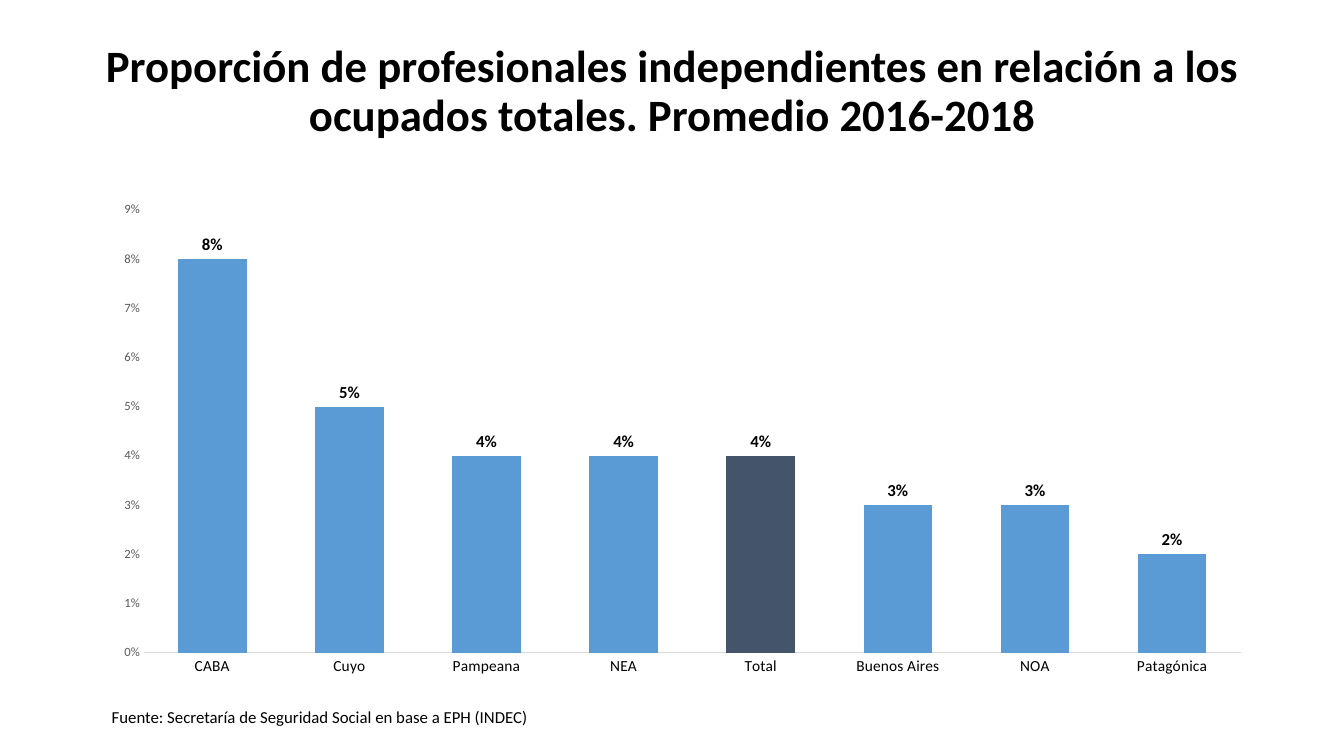
from dataclasses import dataclass
from typing import Any

from lxml.etree import SubElement
from pptx import Presentation
from pptx.chart.data import CategoryChartData
from pptx.dml.color import RGBColor
from pptx.enum.chart import XL_CHART_TYPE as ChartType
from pptx.enum.chart import XL_LABEL_POSITION as LabelPosition
from pptx.enum.chart import XL_TICK_MARK as TickMark
from pptx.enum.text import MSO_ANCHOR as Anchor
from pptx.enum.text import MSO_AUTO_SIZE as AutoSize
from pptx.enum.text import PP_ALIGN as Align
from pptx.oxml.ns import qn
from pptx.util import Inches, Pt


@dataclass(frozen=True)
class Theme:
    """Colours, font and type sizes of the slide."""
    font: str = "Calibri"
    ink: str = "000000"
    muted: str = "595959"
    rule: str = "D9D9D9"
    region: str = "5B9BD5"
    total: str = "44546A"
    title_size: int = 32
    source_size: int = 12
    label_size: int = 12
    region_size: int = 11
    chart_size: int = 10
    percent_size: int = 9


@dataclass(frozen=True)
class Box:
    """Position and size in inches."""
    left: float
    top: float
    width: float
    height: float

    def lengths(self) -> list[int]:
        """Return the four lengths for python-pptx."""
        return [Inches(v) for v in (self.left, self.top, self.width, self.height)]


@dataclass(frozen=True)
class Passage:
    """A block of text with its place and format."""
    text: str
    box: Box
    size: int
    frame_format: dict[str, Any]
    paragraph_format: dict[str, Any]
    bold: bool = False


@dataclass(frozen=True)
class Share:
    """Independent professionals as a share of all employed in a region."""
    region: str
    value: float


THEME = Theme()
PERCENT = "0%"
TOTAL = "Total"
CHART_BOX = Box(0.92, 2, 11.5, 4.76)
PLOT_LAYOUT = {
    "layoutTarget": "inner", "xMode": "edge", "yMode": "edge",
    "x": "0.044", "y": "0.017", "w": "0.946", "h": "0.923",
}
SHARES = [
    Share("CABA", 0.08),
    Share("Cuyo", 0.05),
    Share("Pampeana", 0.04),
    Share("NEA", 0.04),
    Share(TOTAL, 0.04),
    Share("Buenos Aires", 0.03),
    Share("NOA", 0.03),
    Share("Patagónica", 0.02),
]
PASSAGES = [
    Passage(
        "Proporción de profesionales independientes en relación a los "
        "ocupados totales. Promedio 2016-2018",
        Box(0.92, 0.19, 11.5, 1.45), THEME.title_size,
        {"vertical_anchor": Anchor.MIDDLE},
        {"alignment": Align.CENTER, "line_spacing": 0.9}, bold=True,
    ),
    Passage(
        "Fuente: Secretaría de Seguridad Social en base a EPH (INDEC)",
        Box(1.01, 6.96, 10.53, 0.3), THEME.source_size,
        {"auto_size": AutoSize.SHAPE_TO_FIT_TEXT},
        {"alignment": Align.LEFT},
    ),
]


def apply(target: Any, values: dict[str, Any]) -> None:
    """Set each named attribute on the target."""
    for name, value in values.items():
        setattr(target, name, value)


def style_font(font: Any, size: int, color: str = THEME.ink, bold: bool = False) -> None:
    """Give a font its face, size, weight and colour."""
    apply(font, {"name": THEME.font, "size": Pt(size), "bold": bold})
    font.color.rgb = RGBColor.from_string(color)


def paint(fill: Any, color: str) -> None:
    """Make a fill solid in one colour."""
    fill.solid()
    fill.fore_color.rgb = RGBColor.from_string(color)


def draw_passage(slide: Any, passage: Passage) -> None:
    """Draw one text block."""
    frame = slide.shapes.add_textbox(*passage.box.lengths()).text_frame
    apply(frame, {"word_wrap": True, **passage.frame_format})
    paragraph = frame.paragraphs[0]
    apply(paragraph, passage.paragraph_format)
    run = paragraph.add_run()
    run.text = passage.text
    style_font(run.font, passage.size, bold=passage.bold)


def place_plot(chart: Any) -> None:
    """Fix the inner plot area within the chart."""
    plot_area = chart.element.find(".//" + qn("c:plotArea"))
    for previous in plot_area.findall(qn("c:layout")):
        plot_area.remove(previous)
    layout = SubElement(plot_area, qn("c:layout"))
    plot_area.insert(0, layout)
    manual = SubElement(layout, qn("c:manualLayout"))
    for name, value in PLOT_LAYOUT.items():
        SubElement(manual, qn(f"c:{name}")).set("val", value)


def style_axes(chart: Any) -> None:
    """Format the region axis and the percentage axis."""
    plain = {
        "has_major_gridlines": False,
        "major_tick_mark": TickMark.NONE,
        "minor_tick_mark": TickMark.NONE,
    }
    regions, percents = chart.category_axis, chart.value_axis
    apply(regions, plain)
    apply(percents, {**plain, "minimum_scale": 0, "maximum_scale": 0.09, "major_unit": 0.01})
    apply(percents.tick_labels, {"number_format": PERCENT, "number_format_is_linked": False})
    style_font(regions.tick_labels.font, THEME.region_size)
    style_font(percents.tick_labels.font, THEME.percent_size, THEME.muted)
    regions.format.line.width = Pt(0.75)
    paint(regions.format.line.fill, THEME.rule)
    percents.format.line.fill.background()


def draw_shares(slide: Any, shares: list[Share]) -> None:
    """Draw the column chart with the total highlighted."""
    data = CategoryChartData(number_format=PERCENT)
    data.categories = [share.region for share in shares]
    data.add_series("Series 1", [share.value for share in shares])
    chart = slide.shapes.add_chart(
        ChartType.COLUMN_CLUSTERED, *CHART_BOX.lengths(), data
    ).chart
    apply(chart, {"has_title": False, "has_legend": False})
    style_font(chart.font, THEME.chart_size)
    style_axes(chart)
    place_plot(chart)

    plot = chart.plots[0]
    apply(plot, {
        "gap_width": 100, "overlap": -27,
        "vary_by_categories": False, "has_data_labels": True,
    })
    apply(plot.data_labels, {
        "show_value": True, "number_format": PERCENT,
        "number_format_is_linked": False, "position": LabelPosition.OUTSIDE_END,
    })
    style_font(plot.data_labels.font, THEME.label_size, bold=True)
    columns = plot.series[0]
    paint(columns.format.fill, THEME.region)
    total_index = [share.region for share in shares].index(TOTAL)
    paint(columns.points[total_index].format.fill, THEME.total)


def main() -> None:
    """Build and save the slide."""
    deck = Presentation()
    apply(deck, {"slide_width": Inches(13.33), "slide_height": Inches(7.5)})
    slide = deck.slides.add_slide(deck.slide_layouts[6])
    for passage in PASSAGES:
        draw_passage(slide, passage)
    draw_shares(slide, SHARES)
    deck.save("out.pptx")


if __name__ == "__main__":
    main()
